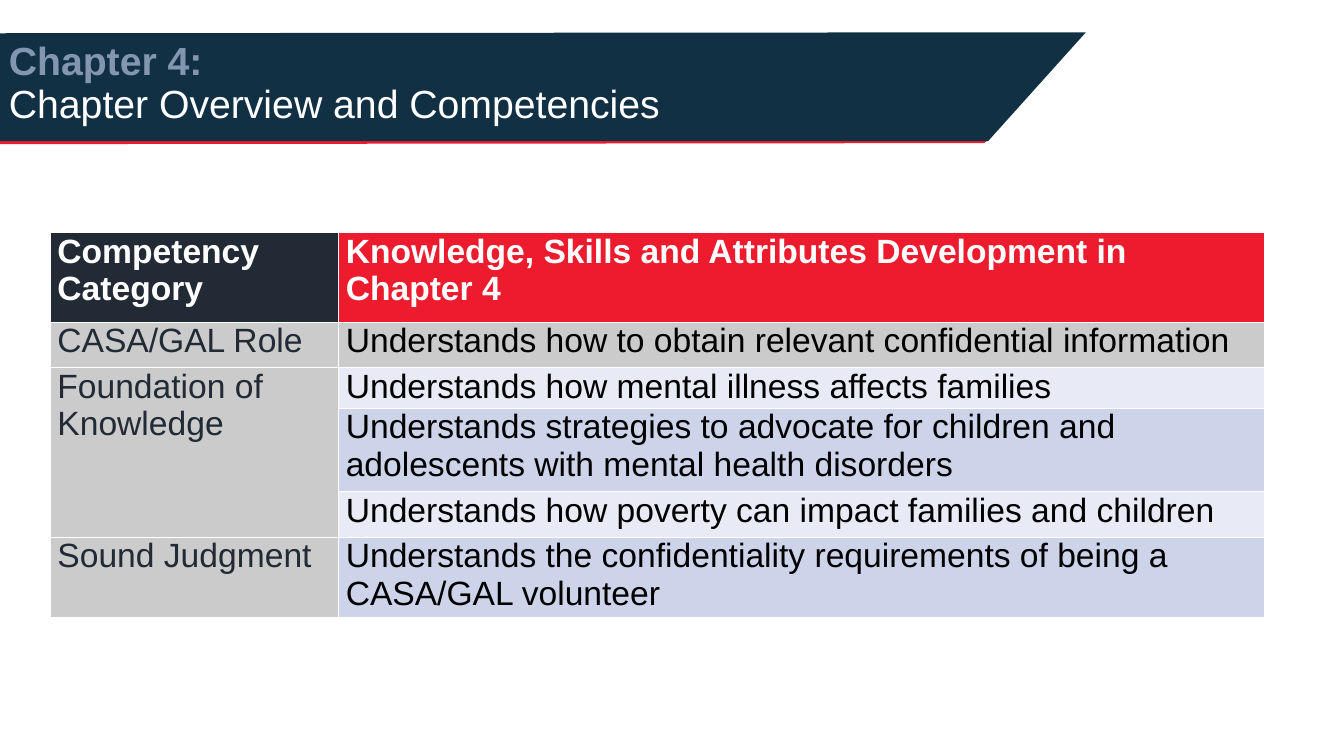
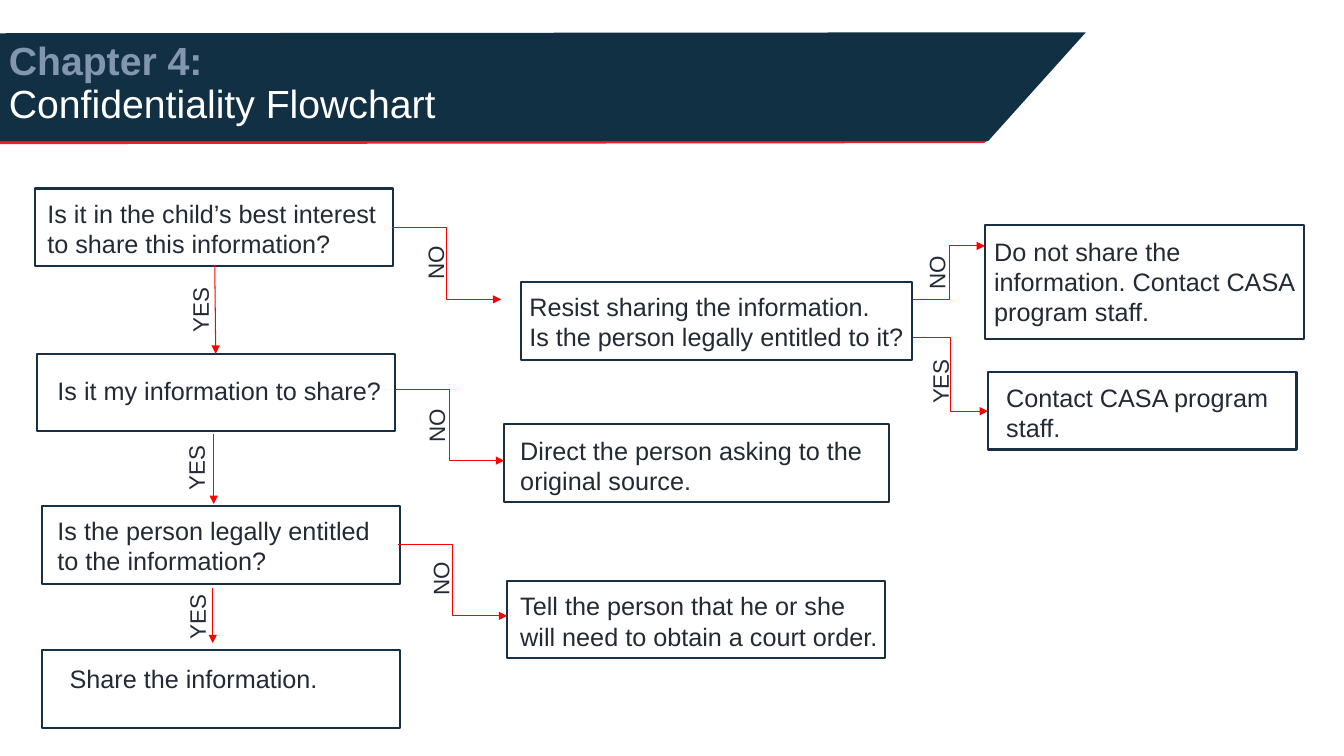
"""Build the Chapter 4 competency table and confidentiality flowchart slides."""
import pptx
import pptx.util
import pptx.dml.color
import pptx.enum.shapes
import pptx.enum.text
import pptx.oxml
import pptx.oxml.ns

Inches, Pt = pptx.util.Inches, pptx.util.Pt
SHAPE = pptx.enum.shapes.MSO_SHAPE
LINK = pptx.enum.shapes.MSO_CONNECTOR
ANCHOR = pptx.enum.text.MSO_ANCHOR
ALIGN = pptx.enum.text.PP_ALIGN

FONT = "Arial"
COLORS = {
    "navy": "113044", "red": "ED1B2E", "white": "FFFFFF", "black": "000000",
    "slate": "8296B0", "ink": "222A35", "grey": "CBCBCB", "pale": "E8EBF5",
    "blue": "CDD4EA", "outline": "192F44", "arrow": "FF0000",
}

CHAPTER = "Chapter 4:"
BANDS = [
    ("red", [(-0.01, 1.38), (9.81, 1.38), (9.76, 1.42), (-0.01, 1.43)]),
    ("navy", [(10.77, 0.32), (0, 0.33), (-0.01, 1.4), (9.8, 1.4)]),
]

TABLE_AT = (0.5, 2.31)
COLUMNS = [2.86, 9.18]
HEADER = ("Competency Category",
          "Knowledge, Skills and Attributes Development in Chapter 4")
HEADER_HEIGHT = 0.89
COMPETENCIES = [
    ("CASA/GAL Role", [
        ("Understands how to obtain relevant confidential information", "grey", 0.45),
    ]),
    ("Foundation of Knowledge", [
        ("Understands how mental illness affects families", "pale", 0.4),
        ("Understands strategies to advocate for children and adolescents "
         "with mental health disorders", "blue", 0.83),
        ("Understands how poverty can impact families and children", "pale", 0.45),
    ]),
    ("Sound Judgment", [
        ("Understands the confidentiality requirements of being a "
         "CASA/GAL volunteer", "blue", 0.75),
    ]),
]

BOX_HEIGHT = 0.77
# text, (left, top, width, height), (left, top, right) insets
BOXES = [
    ("Is it in the child’s best interest to share this information?",
     (0.35, 1.87, 3.55, BOX_HEIGHT), (0.12, 0.1, 0.1)),
    ("Is it my information to share?",
     (0.37, 3.51, 3.55, BOX_HEIGHT), (0.2, 0.21, 0.1)),
    ("Is the person legally entitled to the information?",
     (0.42, 5.02, 3.55, BOX_HEIGHT), (0.15, 0.09, 0.1)),
    ("Share the information.",
     (0.42, 6.45, 3.55, BOX_HEIGHT), (0.27, 0.13, 0.1)),
    ("Resist sharing the information.\vIs the person legally entitled to it?",
     (5.17, 2.8, 3.88, BOX_HEIGHT), (0.08, 0.09, 0.02)),
    ("Direct the person asking to the original source.",
     (5, 4.21, 3.82, BOX_HEIGHT), (0.16, 0.11, 0.1)),
    ("Tell the person that he or she will need to obtain a court order.",
     (5.03, 5.76, 3.75, BOX_HEIGHT), (0.13, 0.1, 0.02)),
    ("Do not share the information. Contact CASA program staff.",
     (9.77, 2.23, 3.16, 1.13), (0.09, 0.11, 0)),
    ("Contact CASA program staff.",
     (9.8, 3.69, 3.06, BOX_HEIGHT), (0.18, 0.1, 0.1)),
]
DOWN_ARROWS = [
    (2.13, 2.63, 2.14, 3.51), (2.12, 4.31, 2.12, 5), (2.11, 5.83, 2.11, 6.38),
]
BENT_ARROWS = [
    (3.89, 2.26, 4.97, 2.97), (3.92, 3.86, 5, 4.57), (3.95, 5.4, 5.03, 6.11),
    (9.06, 2.97, 9.77, 2.44), (9.06, 3.35, 9.8, 4.08),
]
LABEL_HEIGHT = 0.37
LABELS = [
    ("YES", 0.65, [(1.66, 2.89), (1.62, 4.46), (1.63, 5.94), (9, 3.6)]),
    ("NO", 0.54, [(4.05, 2.42), (4.06, 4.04), (4.1, 5.56), (9.02, 2.52)]),
]


def rgb(name):
    return pptx.dml.color.RGBColor.from_string(COLORS[name])


def inches(values):
    return [Inches(v) for v in values]


def style(item, size, color, bold=False):
    item.font.name = FONT
    item.font.size = Pt(size)
    item.font.bold = bold
    item.font.color.rgb = rgb(color)


def set_insets(tf, left, top, right, bottom):
    tf.margin_left, tf.margin_top, tf.margin_right, tf.margin_bottom = inches(
        (left, top, right, bottom))


def add_slide(prs, title):
    s = prs.slides.add_slide(prs.slide_layouts[6])
    for color, points in BANDS:
        start, *rest = [inches(point) for point in points]
        builder = s.shapes.build_freeform(*start, scale=1.0)
        builder.add_line_segments(rest, close=True)
        sp = builder.convert_to_shape()
        sp.shadow.inherit = False
        sp.fill.solid()
        sp.fill.fore_color.rgb = rgb(color)
        sp.line.fill.background()
    tf = s.shapes.add_textbox(*inches((-0.01, 0.11, 11.5, 1.45))).text_frame
    tf.word_wrap = True
    tf.vertical_anchor = ANCHOR.MIDDLE
    p = tf.paragraphs[0]
    p.text = f"{CHAPTER}\v{title}"
    p.line_spacing = 0.9
    chapter, heading = p.runs
    style(chapter, 28, "slate", True)
    style(heading, 28, "white")
    return s


def fill_cell(cell, text, fill, color, bold=False):
    cell.fill.solid()
    cell.fill.fore_color.rgb = rgb(fill)
    set_insets(cell, 0.07, 0, 0.07, 0)
    cell.text_frame.text = text
    style(cell.text_frame.paragraphs[0].runs[0], 24, color, bold)


def add_competencies(s):
    heights = [HEADER_HEIGHT] + [h for _, skills in COMPETENCIES for _, _, h in skills]
    size = (sum(COLUMNS), sum(heights))
    table = s.shapes.add_table(
        len(heights), len(COLUMNS), *inches(TABLE_AT + size)).table
    for column, width in zip(table.columns, COLUMNS):
        column.width = Inches(width)
    for row, height in zip(table.rows, heights):
        row.height = Inches(height)
    for i, (text, fill) in enumerate(zip(HEADER, ("ink", "red"))):
        fill_cell(table.cell(0, i), text, fill, "white", True)
    row = 1
    for category, skills in COMPETENCIES:
        first = table.cell(row, 0)
        if len(skills) > 1:
            first.merge(table.cell(row + len(skills) - 1, 0))
        fill_cell(first, category, "grey", "ink")
        for text, fill, _ in skills:
            fill_cell(table.cell(row, 1), text, fill, "black")
            row += 1


def add_box(s, text, at, insets):
    sp = s.shapes.add_shape(SHAPE.RECTANGLE, *inches(at))
    sp.shadow.inherit = False
    sp.fill.background()
    sp.line.color.rgb = rgb("outline")
    sp.line.width = Pt(1.5)
    tf = sp.text_frame
    tf.word_wrap = True
    tf.vertical_anchor = ANCHOR.TOP
    set_insets(tf, *insets, 0)
    p = tf.paragraphs[0]
    p.text = text
    p.alignment = ALIGN.LEFT
    for r in p.runs:
        style(r, 18, "ink")


def add_arrow(s, kind, ends):
    c = s.shapes.add_connector(kind, *inches(ends))
    c.line.color.rgb = rgb("arrow")
    c.line.width = Pt(0.75)
    qn = pptx.oxml.ns.qn
    line = c.line._get_or_add_ln()
    line.append(line.makeelement(qn("a:tailEnd"), {"type": "triangle"}))
    line.addnext(line.makeelement(qn("a:effectLst"), {}))


def add_label(s, text, left, top, width):
    sp = s.shapes.add_textbox(*inches((left, top, width, LABEL_HEIGHT)))
    sp.rotation = 270
    tf = sp.text_frame
    tf.word_wrap = True
    set_insets(tf, 0, 0.05, 0, 0.05)
    p = tf.paragraphs[0]
    p.text = text
    p.alignment = ALIGN.CENTER
    style(p.runs[0], 16, "ink")


def add_flowchart(s):
    for box in BOXES:
        add_box(s, *box)
    for kind, arrows in ((LINK.STRAIGHT, DOWN_ARROWS), (LINK.ELBOW, BENT_ARROWS)):
        for ends in arrows:
            add_arrow(s, kind, ends)
    for text, width, places in LABELS:
        for left, top in places:
            add_label(s, text, left, top, width)


def main():
    prs = pptx.Presentation()
    prs.slide_width, prs.slide_height = inches((13.33, 7.5))
    add_competencies(add_slide(prs, "Chapter Overview and Competencies"))
    add_flowchart(add_slide(prs, "Confidentiality Flowchart"))
    prs.save("out.pptx")


if __name__ == "__main__":
    main()
